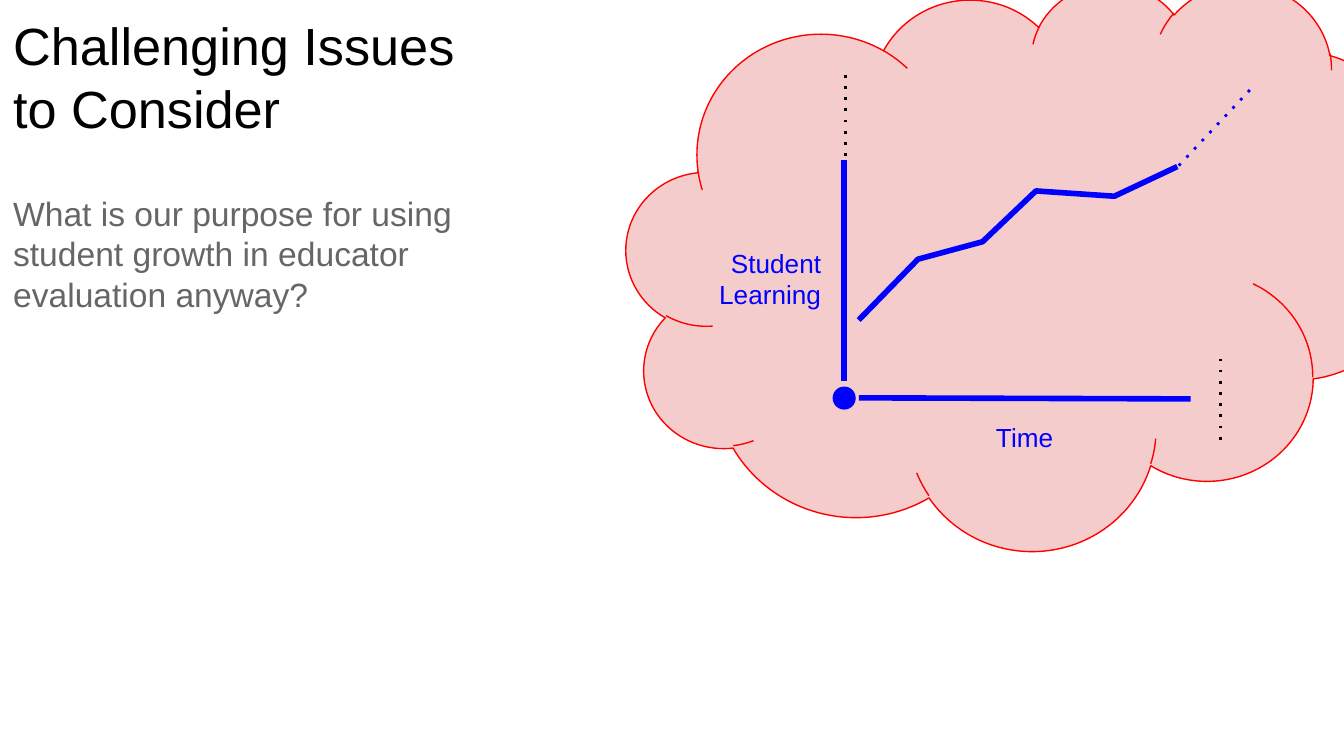
from dataclasses import dataclass

from lxml.etree import SubElement
from pptx import Presentation
from pptx.dml.color import RGBColor
from pptx.enum.shapes import MSO_CONNECTOR, MSO_SHAPE
from pptx.enum.text import MSO_ANCHOR, PP_ALIGN
from pptx.oxml.ns import qn
from pptx.shapes.autoshape import Shape
from pptx.shapes.connector import Connector
from pptx.util import Cm, Pt

COLORS = {
    "cloud": "F4CCCC",
    "outline": "FF0000",
    "chart": "0000FF",
    "title": "000000",
    "question": "666666",
    "limit": "000000",
}


@dataclass
class Label:
    """Describe a text box in centimetres."""
    lines: tuple[str, ...]
    left: float
    top: float
    width: float
    height: float
    size: int
    color: str
    align: PP_ALIGN = PP_ALIGN.LEFT
    anchor: MSO_ANCHOR = MSO_ANCHOR.TOP


@dataclass
class Stroke:
    """Describe a straight line in centimetres."""
    start: tuple[float, float]
    end: tuple[float, float]
    color: str
    weight: float = 3
    dotted: bool = False


HEADINGS = [
    Label(("Challenging Issues to Consider",), 0, 0, 9.63, 1.6, 28, "title"),
    Label(("What is our purpose for using student growth in educator evaluation anyway?",),
          0, 3.4, 9.75, 2.92, 18, "question"),
]
AXIS_LABELS = [
    Label(("Time",), 16.23, 7.72, 6.27, 1.32, 14, "chart", PP_ALIGN.CENTER),
    Label(("Student", "Learning"), 12.85, 3.02, 2.92, 4.5, 14, "chart",
          PP_ALIGN.RIGHT, MSO_ANCHOR.MIDDLE),
]
STROKES = [
    Stroke((16.23, 7.52), (22.5, 7.54), "chart"),
    Stroke((15.95, 7.21), (15.95, 3.02), "chart"),
    Stroke((15.98, 2.95), (15.98, 1.42), "limit", 1.5, True),
    Stroke((23.06, 8.31), (23.06, 6.78), "limit", 1.5, True),
    Stroke((23.62, 1.7), (22.23, 3.18), "chart", 1.5, True),
]
GROWTH = [(16.23, 6.05), (17.35, 4.9), (18.57, 4.57),
          (19.58, 3.61), (21.06, 3.71), (22.25, 3.15)]


def rgb(name: str) -> RGBColor:
    """Look up a named colour."""
    return RGBColor.from_string(COLORS[name])


def set_line(shape: Shape | Connector, color: str, weight: float) -> None:
    """Set the colour and weight of a line."""
    shape.line.color.rgb = rgb(color)
    shape.line.width = Pt(weight)


def add_label(shapes, label: Label) -> None:
    """Add a text box with one paragraph for each line."""
    box = shapes.add_textbox(Cm(label.left), Cm(label.top), Cm(label.width), Cm(label.height))
    frame = box.text_frame
    frame.word_wrap = True
    frame.vertical_anchor = label.anchor
    frame.margin_left = frame.margin_right = Cm(0.25)
    frame.margin_top = frame.margin_bottom = Cm(0.25)
    for index, line in enumerate(label.lines):
        para = frame.add_paragraph() if index else frame.paragraphs[0]
        para.alignment = label.align
        span = para.add_run()
        span.text = line
        span.font.name = "Arial"
        span.font.size = Pt(label.size)
        span.font.color.rgb = rgb(label.color)


def add_stroke(shapes, stroke: Stroke) -> None:
    """Add a straight line, solid or dotted."""
    connector = shapes.add_connector(
        MSO_CONNECTOR.STRAIGHT, *map(Cm, stroke.start), *map(Cm, stroke.end))
    set_line(connector, stroke.color, stroke.weight)
    properties = connector._element.spPr
    if stroke.dotted:
        SubElement(properties.find(qn("a:ln")), qn("a:prstDash")).set("val", "dot")
    SubElement(properties, qn("a:effectLst"))


def add_filled(shapes, kind: MSO_SHAPE, bounds: tuple[float, ...], fill: str, line: str) -> None:
    """Add a filled preset shape with a thin outline."""
    shape = shapes.add_shape(kind, *map(Cm, bounds))
    shape.shadow.inherit = False
    shape.fill.solid()
    shape.fill.fore_color.rgb = rgb(fill)
    set_line(shape, line, 0.75)


def add_curve(shapes, points: list[tuple[float, float]]) -> None:
    """Add the open growth line."""
    start, *others = [(Cm(x), Cm(y)) for x, y in points]
    builder = shapes.build_freeform(*start)
    builder.add_line_segments(others, close=False)
    curve = builder.convert_to_shape()
    curve.shadow.inherit = False
    curve.fill.background()
    set_line(curve, "chart", 3)


def main() -> None:
    """Build the slide and save it."""
    deck = Presentation()
    deck.slide_width, deck.slide_height = Cm(25.4), Cm(14.29)
    page = deck.slides.add_slide(deck.slide_layouts[6])
    add_filled(page.shapes, MSO_SHAPE.CLOUD, (11.84, -0.33, 14.99, 10.72), "cloud", "outline")
    for heading in HEADINGS:
        add_label(page.shapes, heading)
    chart = page.shapes.add_group_shape().shapes
    add_filled(chart, MSO_SHAPE.OVAL, (15.75, 7.32, 0.41, 0.41), "chart", "chart")
    for label in AXIS_LABELS:
        add_label(chart, label)
    add_curve(chart, GROWTH)
    for stroke in STROKES:
        add_stroke(chart, stroke)
    deck.save("out.pptx")


if __name__ == "__main__":
    main()
